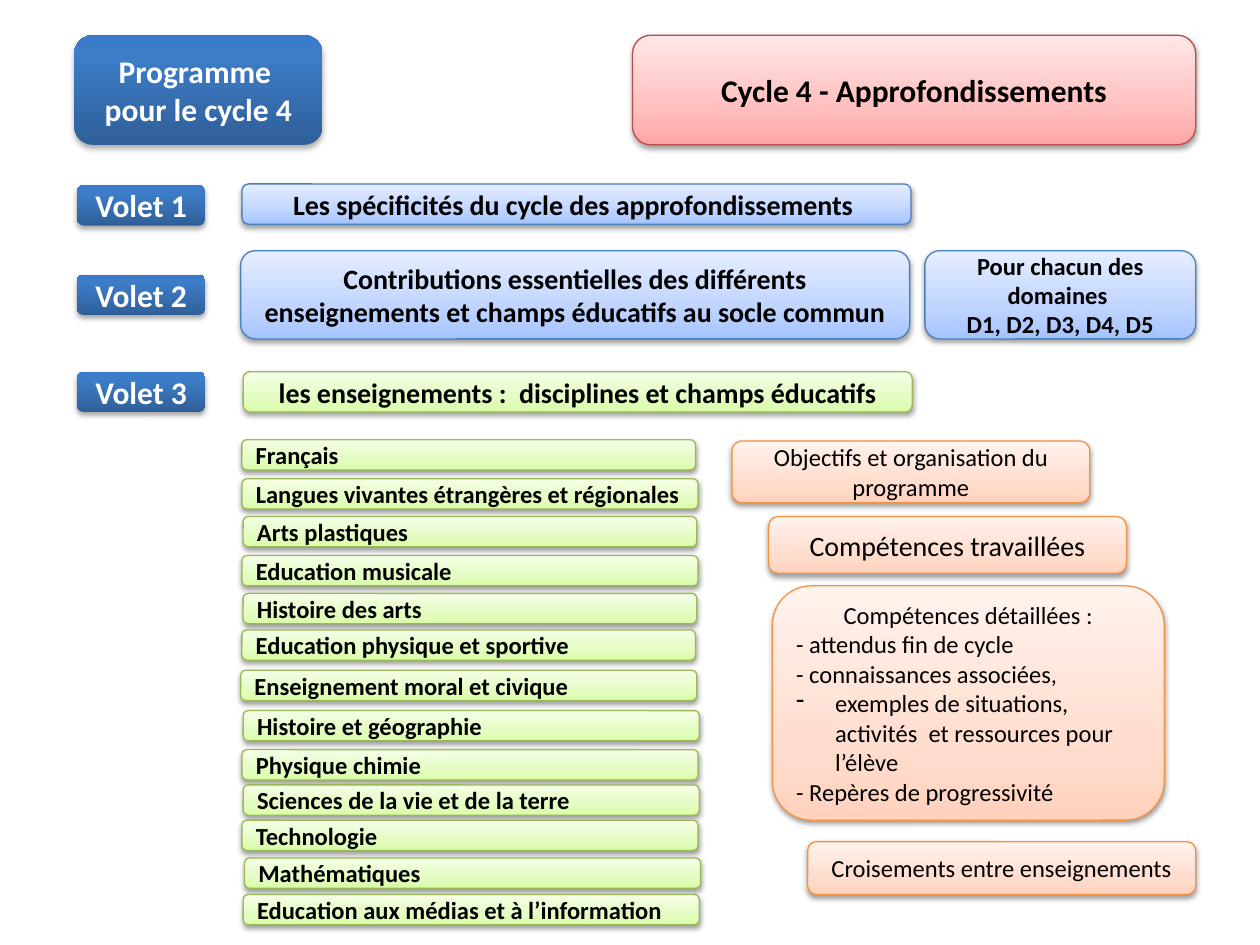
from collections import namedtuple
from copy import deepcopy

from lxml import etree
from pptx import Presentation
from pptx.dml.color import RGBColor
from pptx.enum.shapes import MSO_SHAPE
from pptx.enum.text import MSO_ANCHOR, PP_ALIGN
from pptx.oxml.ns import qn
from pptx.util import Inches, Pt

ROUNDED = MSO_SHAPE.ROUNDED_RECTANGLE
MIDDLE = MSO_ANCHOR.MIDDLE
LEFT, CENTER = PP_ALIGN.LEFT, PP_ALIGN.CENTER
FONT = "Calibri"
BLACK = RGBColor(0x00, 0x00, 0x00)
WHITE = RGBColor(0xFF, 0xFF, 0xFF)

Style = namedtuple("Style", "colors middle line text bold shadow")
Shadow = namedtuple("Shadow", "alpha blur dist")

SOFT = Shadow(38, 3.1, 1.6)
STRONG = Shadow(35, 3.1, 1.8)
WIDE = Shadow(32, 3.5, 2.2)

NAVY = Style(
    (RGBColor(0x2F, 0x5F, 0x99), RGBColor(0x3D, 0x7C, 0xC7), RGBColor(0x3A, 0x7C, 0xCB)),
    0.8, None, WHITE, True, STRONG)
RED = Style(
    (RGBColor(0xFF, 0xA6, 0xA5), RGBColor(0xFF, 0xC0, 0xBF), RGBColor(0xFF, 0xE7, 0xE7)),
    0.35, RGBColor(0xBF, 0x4C, 0x48), BLACK, True, SOFT)
BLUE = Style(
    (RGBColor(0xA4, 0xC4, 0xFF), RGBColor(0xBF, 0xD4, 0xFF), RGBColor(0xE6, 0xEE, 0xFF)),
    0.35, RGBColor(0x4B, 0x7E, 0xBC), BLACK, True, SOFT)
GREEN = Style(
    (RGBColor(0xDA, 0xFD, 0xA7), RGBColor(0xE4, 0xFC, 0xC2), RGBColor(0xF5, 0xFF, 0xE7)),
    0.35, RGBColor(0x98, 0xB9, 0x55), BLACK, True, SOFT)
ORANGE = Style(
    (RGBColor(0xFF, 0xD2, 0xBD), RGBColor(0xFF, 0xDE, 0xD0), RGBColor(0xFF, 0xF2, 0xED)),
    0.35, RGBColor(0xF6, 0x92, 0x40), BLACK, False, SOFT)

VOLETS = [("Volet 1", 1.47), ("Volet 2", 2.18), ("Volet 3", 2.95)]
SUBJECTS = [
    ("Français", 1.92, 3.49, 3.6),
    ("Langues vivantes étrangères et régionales", 1.92, 3.8, 3.62),
    ("Arts plastiques", 1.93, 4.1, 3.6),
    ("Education musicale", 1.92, 4.41, 3.62),
    ("Histoire des arts", 1.93, 4.71, 3.6),
    ("Education physique et sportive", 1.92, 5, 3.6),
    ("Enseignement moral et civique", 1.91, 5.32, 3.62),
    ("Histoire et géographie", 1.93, 5.64, 3.62),
    ("Physique chimie", 1.92, 5.95, 3.62),
    ("Sciences de la vie et de la terre", 1.93, 6.23, 3.62),
    ("Technologie", 1.92, 6.51, 3.62),
    ("Mathématiques", 1.94, 6.81, 3.62),
    ("Education aux médias et à l’information", 1.93, 7.1, 3.62),
]
DETAILS = [
    "Compétences détaillées :",
    "- attendus fin de cycle",
    "- connaissances associées,",
    "exemples de situations, activités  et ressources pour l’élève",
    "- Repères de progressivité",
]


def fill_gradient(sp, style):
    sp.fill.gradient()
    sp.fill.gradient_angle = 90
    first = sp._element.spPr.find(".//" + qn("a:gs"))
    first.addnext(deepcopy(first))
    positions = (0, style.middle, 1)
    for stop, color, position in zip(sp.fill.gradient_stops, style.colors, positions):
        stop.color.rgb = color
        stop.position = position


def add_shadow(sp, shadow):
    sp.shadow.inherit = False
    effects = sp._element.spPr.find(qn("a:effectLst"))
    outer = etree.SubElement(
        effects, qn("a:outerShdw"), blurRad=str(Pt(shadow.blur)),
        dist=str(Pt(shadow.dist)), dir="5400000", rotWithShape="0")
    color = etree.SubElement(outer, qn("a:srgbClr"), val=str(BLACK))
    etree.SubElement(color, qn("a:alpha"), val=str(shadow.alpha * 1000))


def add_box(s, style, left, top, width, height, lines, size, align=CENTER):
    sp = s.shapes.add_shape(
        ROUNDED, Inches(left), Inches(top), Inches(width), Inches(height))
    fill_gradient(sp, style)
    if style.line is None:
        sp.line.fill.background()
    else:
        sp.line.color.rgb = style.line
        sp.line.width = Pt(0.75)
    add_shadow(sp, style.shadow)
    tf = sp.text_frame
    tf.word_wrap = True
    tf.vertical_anchor = MIDDLE
    tf.text = "\n".join(lines)
    for p in tf.paragraphs:
        p.alignment = align
        for r in p.runs:
            r.font.name = FONT
            r.font.size = Pt(size)
            r.font.bold = style.bold
            r.font.color.rgb = style.text
    return sp


def add_dash_bullet(p):
    pPr = p._p.get_or_add_pPr()
    pPr.set("marL", str(Inches(0.31)))
    pPr.set("indent", str(-Inches(0.31)))
    etree.SubElement(pPr, qn("a:buChar"), char="-")


def add_headings(s):
    add_box(s, RED, 5.02, 0.28, 4.47, 0.87, ["Cycle 4 - Approfondissements"], 18)
    add_box(s, NAVY._replace(shadow=WIDE), 0.59, 0.28, 1.97, 0.87,
            ["Programme ", "pour le cycle 4"], 18)


def add_volets(s):
    for label, top in VOLETS:
        add_box(s, NAVY, 0.61, top, 1.02, 0.32, [label], 18)
    add_box(s, BLUE, 1.92, 1.46, 5.31, 0.32,
            ["Les spécificités du cycle des approfondissements "], 16)
    add_box(s, BLUE, 1.91, 1.99, 5.31, 0.7,
            ["Contributions essentielles des différents enseignements "
             "et champs éducatifs au socle commun"], 16)
    add_box(s, GREEN, 1.93, 2.95, 5.31, 0.32,
            ["les enseignements :  disciplines et champs éducatifs"], 16)
    add_box(s, BLUE, 7.34, 1.99, 2.15, 0.7,
            ["Pour chacun des domaines ", "D1, D2, D3, D4, D5"], 14)


def add_subjects(s):
    for name, left, top, width in SUBJECTS:
        add_box(s, GREEN, left, top, width, 0.24, [name], 14, LEFT)


def add_programme_parts(s):
    add_box(s, ORANGE, 5.81, 3.5, 2.84, 0.49,
            ["Objectifs et organisation du programme"], 14)
    add_box(s, ORANGE, 6.1, 4.1, 2.84, 0.45, ["Compétences travaillées"], 16)
    details = add_box(s, ORANGE, 6.13, 4.65, 3.11, 1.86, DETAILS, 14, LEFT)
    paragraphs = details.text_frame.paragraphs
    paragraphs[0].alignment = CENTER
    add_dash_bullet(paragraphs[3])
    add_box(s, ORANGE, 6.41, 6.68, 3.08, 0.42, ["Croisements entre enseignements"], 14)


def main():
    prs = Presentation()
    prs.slide_width, prs.slide_height = Inches(10), Inches(7.5)
    s = prs.slides.add_slide(prs.slide_layouts[6])
    add_headings(s)
    add_volets(s)
    add_subjects(s)
    add_programme_parts(s)
    prs.save("out.pptx")


if __name__ == "__main__":
    main()
